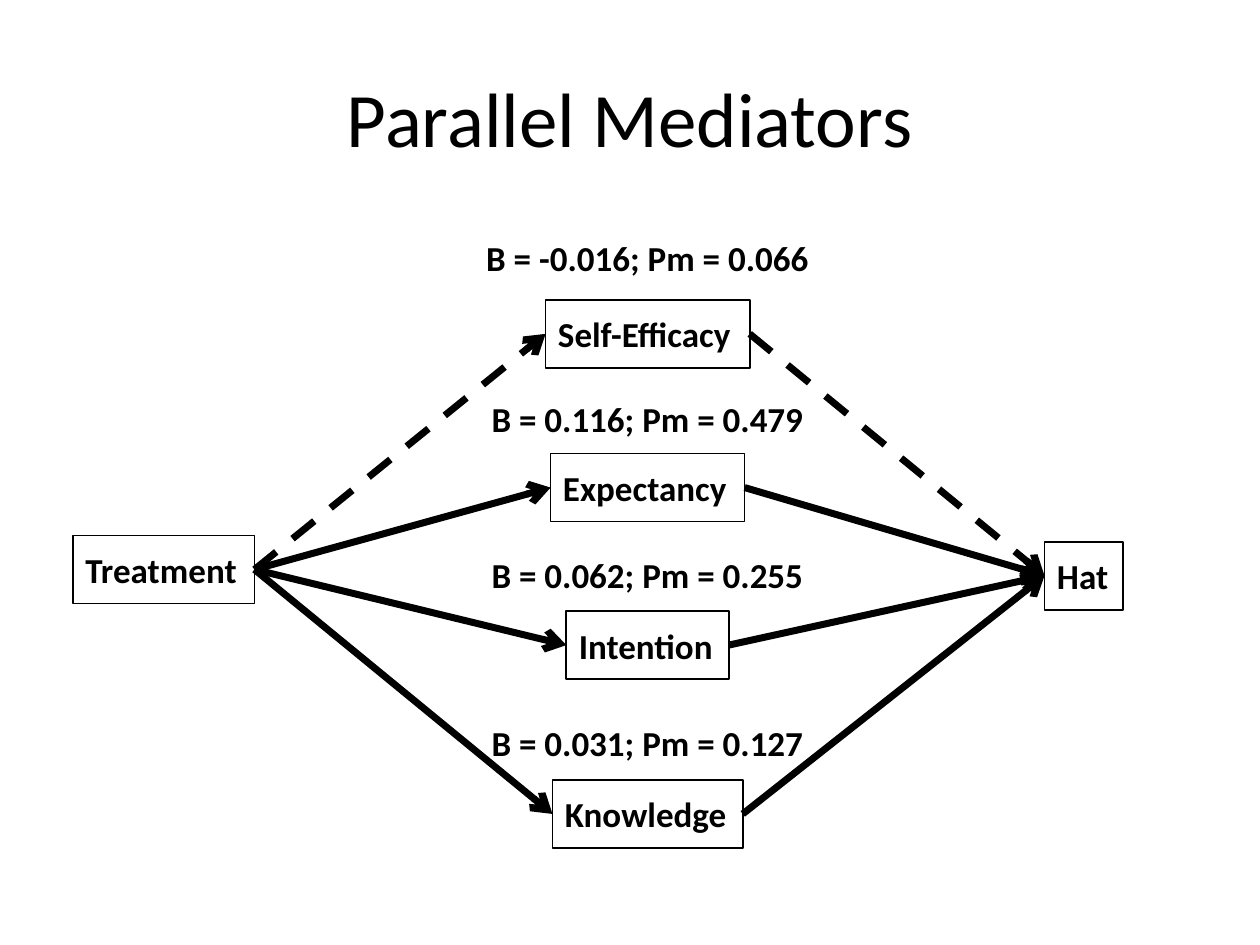
"""Build a path diagram slide of four parallel mediators."""
import lxml.etree
import pptx
import pptx.dml.color
import pptx.enum.dml
import pptx.enum.shapes
import pptx.enum.text
import pptx.oxml.ns
import pptx.util
from pptx.util import Inches

TITLE = "Parallel Mediators"
TREATMENT = ("Treatment", 0.58, 4.25, 1.44)
OUTCOME = ("Hat", 8.29, 4.3, 0.62)
MEDIATORS = [
    {"name": "Self-Efficacy", "top": 2.38, "width": 1.62, "dashed": True,
     "effect": "B = -0.016; Pm = 0.066", "effect_top": 1.77},
    {"name": "Expectancy", "top": 3.6, "width": 1.54, "dashed": False,
     "effect": "B = 0.116; Pm = 0.479", "effect_top": 3.05},
    {"name": "Intention", "top": 4.85, "width": 1.29, "dashed": False,
     "effect": "B = 0.062; Pm = 0.255", "effect_top": 4.29},
    {"name": "Knowledge", "top": 6.19, "width": 1.51, "dashed": False,
     "effect": "B = 0.031; Pm = 0.127", "effect_top": 5.62},
]
CENTER, BOX_HEIGHT, EFFECT_WIDTH = 5.14, 0.54, 5.23
BLACK = "000000"
LEFT_SIDE, RIGHT_SIDE = 1, 3
ALIGN = pptx.enum.text.PP_ALIGN


def color(hex_value):
    return pptx.dml.color.RGBColor.from_string(hex_value)


def write(shape, text, size=20, bold=True, align=ALIGN.LEFT, wrap=True, margin=0.1, grow=True):
    frame = shape.text_frame
    frame.text = text
    frame.word_wrap = wrap
    frame.vertical_anchor = pptx.enum.text.MSO_ANCHOR.MIDDLE
    sizing = pptx.enum.text.MSO_AUTO_SIZE
    frame.auto_size = sizing.SHAPE_TO_FIT_TEXT if grow else sizing.NONE
    frame.margin_left = frame.margin_right = Inches(margin)
    frame.margin_top = frame.margin_bottom = Inches(margin)
    paragraph = frame.paragraphs[0]
    paragraph.alignment = align
    font = paragraph.runs[0].font
    font.name, font.size, font.bold = "Calibri", pptx.util.Pt(size), bold
    font.color.rgb = color(BLACK)


def add_box(slide, name, left, top, width, wrap=False):
    box = slide.shapes.add_shape(
        pptx.enum.shapes.MSO_SHAPE.RECTANGLE,
        Inches(left), Inches(top), Inches(width), Inches(BOX_HEIGHT))
    box.shadow.inherit = False
    box.fill.background()
    box.line.color.rgb = color(BLACK)
    box.line.width = pptx.util.Pt(1)
    write(box, name, wrap=wrap)
    return box


def add_arrow(slide, source, target, dashed):
    arrow = slide.shapes.add_connector(pptx.enum.shapes.MSO_CONNECTOR.STRAIGHT, 0, 0, 0, 0)
    arrow.begin_connect(source, RIGHT_SIDE)
    arrow.end_connect(target, LEFT_SIDE)
    arrow.line.color.rgb = color(BLACK)
    arrow.line.width = pptx.util.Pt(4)
    if dashed:
        arrow.line.dash_style = pptx.enum.dml.MSO_LINE.DASH
    qualified = pptx.oxml.ns.qn
    properties = arrow._element.spPr
    line = properties.find(qualified("a:ln"))
    lxml.etree.SubElement(line, qualified("a:tailEnd")).set("type", "arrow")
    lxml.etree.SubElement(properties, qualified("a:effectLst"))


def main():
    presentation = pptx.Presentation()
    presentation.slide_width, presentation.slide_height = Inches(10), Inches(7.5)
    slide = presentation.slides.add_slide(presentation.slide_layouts[5])

    title = slide.shapes.title
    title.left, title.top = Inches(0.5), Inches(0.3)
    title.width, title.height = Inches(9), Inches(1.25)
    write(title, TITLE, size=44, bold=False, align=ALIGN.CENTER, margin=0.05, grow=False)

    treatment = add_box(slide, *TREATMENT, wrap=True)
    outcome = add_box(slide, *OUTCOME)
    for mediator in MEDIATORS:
        width = mediator["width"]
        box = add_box(slide, mediator["name"], CENTER - width / 2, mediator["top"], width)
        add_arrow(slide, treatment, box, mediator["dashed"])
        add_arrow(slide, box, outcome, mediator["dashed"])
        effect = slide.shapes.add_textbox(
            Inches(CENTER - EFFECT_WIDTH / 2), Inches(mediator["effect_top"]),
            Inches(EFFECT_WIDTH), Inches(BOX_HEIGHT))
        write(effect, mediator["effect"], align=ALIGN.CENTER)

    presentation.save("out.pptx")


if __name__ == "__main__":
    main()
